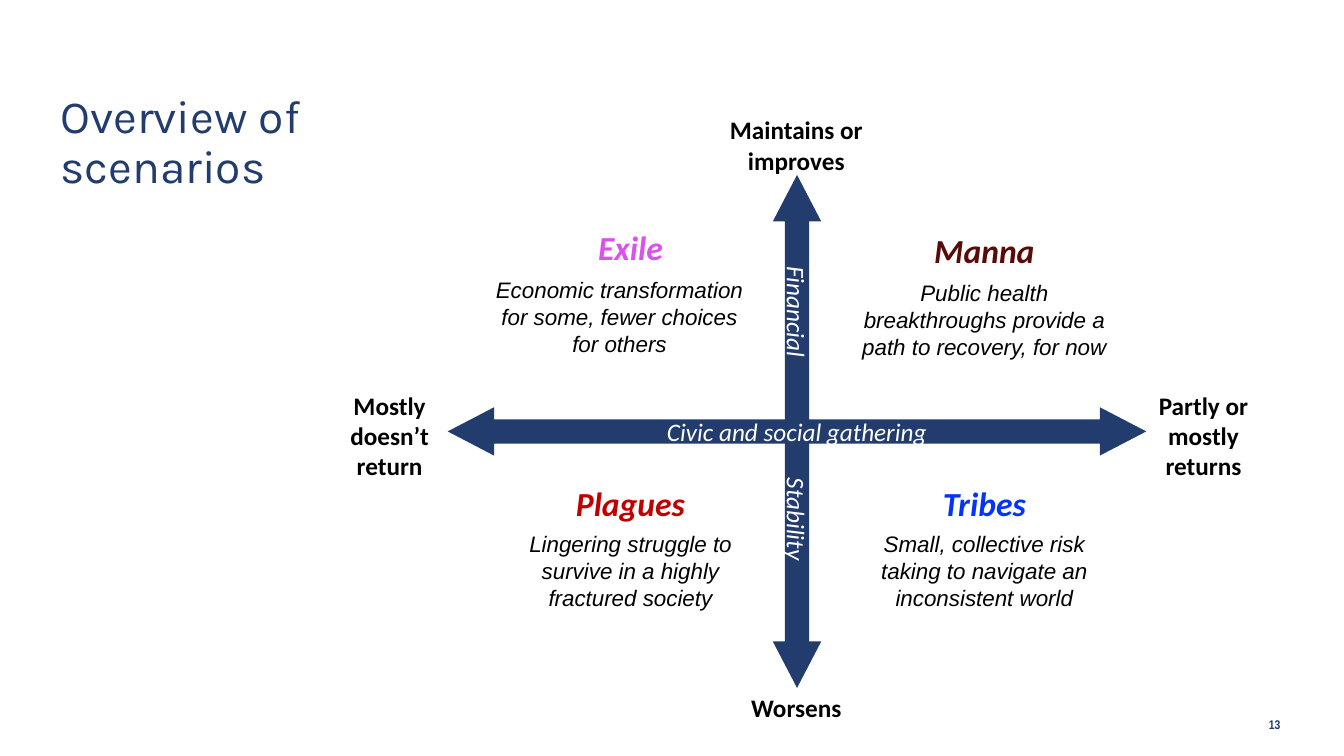
from dataclasses import dataclass

from lxml import etree
from pptx import Presentation, util as u
from pptx.dml.color import RGBColor
from pptx.enum import shapes, text
from pptx.oxml.ns import qn


@dataclass(frozen=True)
class Theme:
    navy: str = "223C6E"
    black: str = "000000"
    white: str = "FFFFFF"
    heading_font: str = "Karla"
    label_font: str = "Calibri"
    body_font: str = "Arial"
    number_font: str = "Arial Narrow"
    title_size: int = 33
    name_size: int = 24
    label_size: int = 18
    body_size: int = 16
    number_size: int = 9


THEME = Theme()
SLIDE_WIDTH, SLIDE_HEIGHT = u.Inches(13.33), u.Inches(7.5)

# All lengths below are percentages of the slide's width or height.
AXIS_X, AXIS_Y = 59.3, 57.07
AXIS_THICKNESS = 6.4
LEFT_COLUMN, RIGHT_COLUMN = 46.91, 73.24
NAME_WIDTH, NAME_HEIGHT = 11.62, 6.67
DESCRIPTION_HEIGHT = 12.13

# Name, colour, description, name centre, description centre, name top,
# drop to the description, description width
SCENARIOS = [
    ("Exile", "DA51ED", "Economic transformation for some, fewer choices for others",
     LEFT_COLUMN, 46.09, 29.33, 6.53, 20.33),
    ("Manna", "5A0B07", "Public health breakthroughs provide a path to recovery, for now",
     RIGHT_COLUMN, RIGHT_COLUMN, 29.73, 6.53, 19.73),
    ("Plagues", "C00000", "Lingering struggle to survive in a highly fractured society",
     LEFT_COLUMN, LEFT_COLUMN, 63.2, 6.27, 19.43),
    ("Tribes", "0432FF", "Small, collective risk taking to navigate an inconsistent world",
     RIGHT_COLUMN, RIGHT_COLUMN, 63.2, 6.27, 19.8),
]

# Text, centre, top, width, height
AXIS_ENDS = [
    ("Maintains or improves", 59.25, 14.53, 17.55, 9.47),
    ("Worsens", 59.25, 90.93, 11.85, 5.33),
    ("Mostly doesn’t return", 28.99, 50.93, 8.92, 13.47),
    ("Partly or mostly returns", 89.55, 50.93, 8.7, 13.47),
]


def frame(center, top, width, height):
    """Turn percentages into left, top, width and height."""
    return (round(SLIDE_WIDTH * (center - width / 2) / 100),
            round(SLIDE_HEIGHT * top / 100),
            round(SLIDE_WIDTH * width / 100),
            round(SLIDE_HEIGHT * height / 100))


def write(shape, words, font, size, color, bold=False, italic=False,
          align=text.PP_ALIGN.CENTER, anchor=text.MSO_ANCHOR.TOP):
    text_frame = shape.text_frame
    text_frame.text = words
    text_frame.word_wrap = True
    text_frame.vertical_anchor = anchor
    paragraph = text_frame.paragraphs[0]
    paragraph.alignment = align
    for run in paragraph.runs:
        run.font.name = font
        run.font.size = u.Pt(size)
        run.font.bold = bold
        run.font.italic = italic
        run.font.color.rgb = RGBColor.from_string(color)
    return paragraph


def add_text(slide, place, words, font, size, color, **style):
    write(slide.shapes.add_textbox(*frame(*place)), words, font, size, color, **style)


def add_title(slide, words):
    title = slide.shapes.title
    title.left, title.top, title.width, title.height = frame(19.91, 11.73, 32.33, 38.27)
    paragraph = write(title, words, THEME.heading_font, THEME.title_size, THEME.navy,
                      align=text.PP_ALIGN.LEFT)
    paragraph.line_spacing = 0.9
    title.text_frame.auto_size = text.MSO_AUTO_SIZE.NONE


def add_axis(slide, words, length, rotation=0, align=text.PP_ALIGN.CENTER):
    place = frame(AXIS_X, AXIS_Y - AXIS_THICKNESS / 2, length, AXIS_THICKNESS)
    arrow = slide.shapes.add_shape(shapes.MSO_SHAPE.LEFT_RIGHT_ARROW, *place)
    arrow.adjustments[0], arrow.adjustments[1] = 0.5, 0.96
    arrow.rotation = rotation
    arrow.shadow.inherit = False
    arrow.fill.solid()
    arrow.fill.fore_color.rgb = RGBColor.from_string(THEME.navy)
    arrow.line.fill.background()
    write(arrow, words, THEME.label_font, THEME.label_size, THEME.white,
          italic=True, align=align, anchor=text.MSO_ANCHOR.MIDDLE)
    return arrow


def spread_words(shape, start, step):
    """Start the text at one inset and send the tabbed word to a tab stop."""
    shape.text_frame.margin_left = round(start)
    properties = shape.text_frame.paragraphs[0]._p.get_or_add_pPr()
    stops = etree.SubElement(properties, qn("a:tabLst"))
    etree.SubElement(stops, qn("a:tab"), pos=str(round(step)), algn="l")


def add_scenario(slide, name, color, description, name_center, description_center,
                 top, drop, width):
    add_text(slide, (name_center, top, NAME_WIDTH, NAME_HEIGHT), name,
             THEME.label_font, THEME.name_size, color, bold=True, italic=True,
             anchor=text.MSO_ANCHOR.MIDDLE)
    add_text(slide, (description_center, top + drop, width, DESCRIPTION_HEIGHT),
             description, THEME.body_font, THEME.body_size, THEME.black, italic=True)


def main():
    presentation = Presentation()
    presentation.slide_width, presentation.slide_height = SLIDE_WIDTH, SLIDE_HEIGHT
    slide = presentation.slides.add_slide(presentation.slide_layouts[5])

    add_title(slide, "Overview of scenarios")
    financial_axis = add_axis(slide, "Financial\tStability", 38.18, rotation=90,
                              align=text.PP_ALIGN.LEFT)
    spread_words(financial_axis, SLIDE_HEIGHT * 0.09, SLIDE_HEIGHT * 0.28)
    add_axis(slide, "Civic and social gathering", 51.98)
    for words, *place in AXIS_ENDS:
        add_text(slide, place, words, THEME.label_font, THEME.label_size,
                 THEME.black, bold=True)
    for scenario in SCENARIOS:
        add_scenario(slide, *scenario)
    add_text(slide, (93.19, 93.2, 5.62, 5.33), "13", THEME.number_font,
             THEME.number_size, THEME.navy, bold=True,
             align=text.PP_ALIGN.RIGHT, anchor=text.MSO_ANCHOR.MIDDLE)
    presentation.save("out.pptx")


if __name__ == "__main__":
    main()
